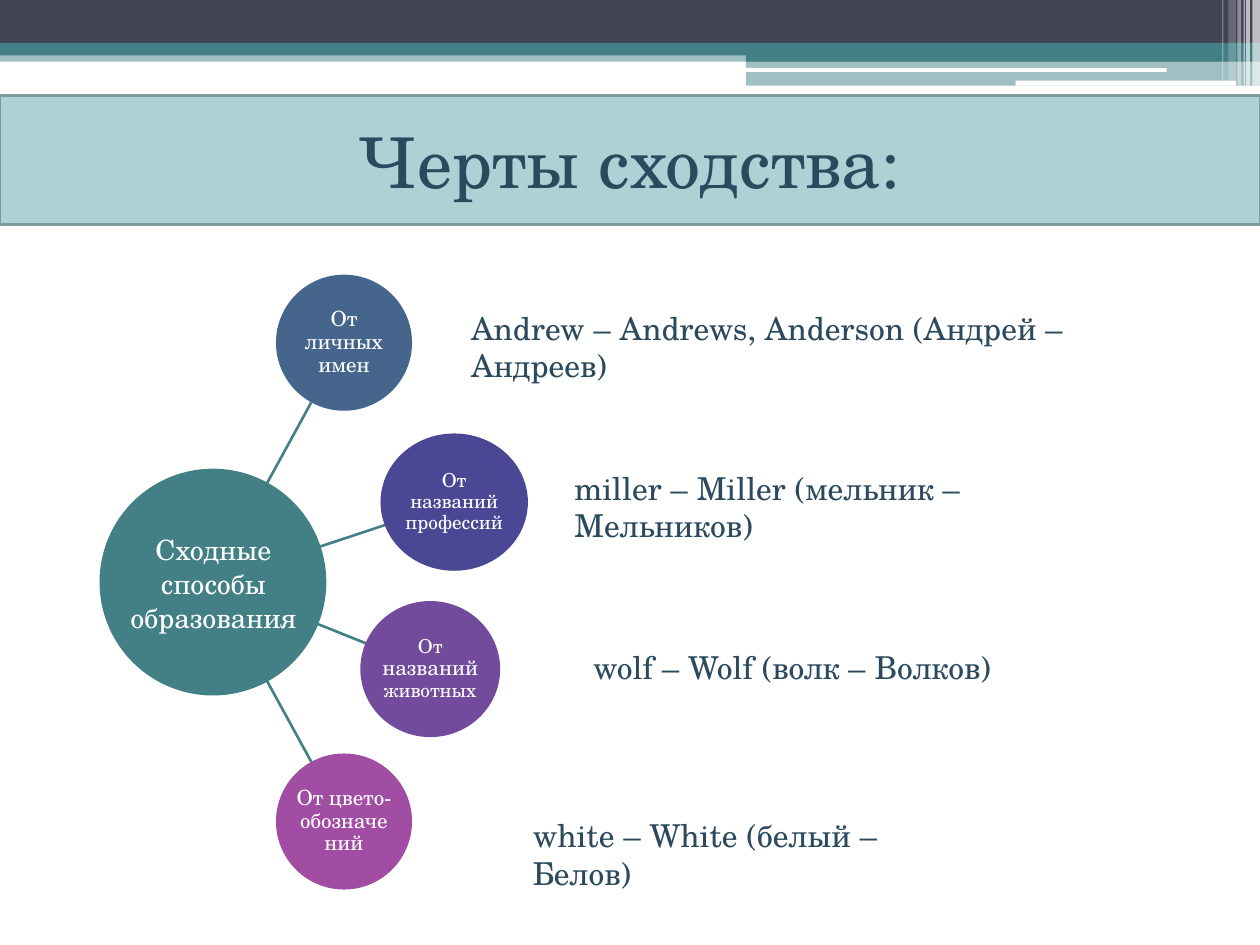
from collections import namedtuple
from math import hypot

from lxml.etree import SubElement
from pptx import Presentation
from pptx.dml.color import RGBColor
from pptx.enum.shapes import MSO_CONNECTOR as Connector, MSO_SHAPE as Shape
from pptx.enum.text import MSO_ANCHOR as Anchor, MSO_AUTO_SIZE as AutoSize, PP_ALIGN as Align
from pptx.oxml.ns import qn
from pptx.util import Inches, Pt

FONT = "TeX Gyre Schola"
WHITE = RGBColor(0xFF, 0xFF, 0xFF)
SLATE = RGBColor(0x42, 0x44, 0x56)
TEAL = RGBColor(0x43, 0x80, 0x86)
PALE_TEAL = RGBColor(0xAC, 0xD2, 0xD5)
TITLE_EDGE = RGBColor(0x7F, 0x9B, 0x9E)
INK = RGBColor(0x2B, 0x4A, 0x5E)
BLUE = RGBColor(0x46, 0x65, 0x8D)
INDIGO = RGBColor(0x4A, 0x48, 0x94)
VIOLET = RGBColor(0x73, 0x4B, 0x9C)
MAGENTA = RGBColor(0xA0, 0x4D, 0xA3)

Box = namedtuple("Box", "left top width height")


def within(box, left, top, width, height):
    return Box(box.left + left, box.top + top, width, height)


def lengths(values):
    return [Inches(value) for value in values]


def center(box):
    return box.left + box.width / 2, box.top + box.height / 2


def write(shape, text, size=18, color=INK, align=Align.LEFT, anchor=Anchor.TOP,
          spacing=None, inset=None):
    frame = shape.text_frame
    frame.word_wrap = True
    frame.auto_size = AutoSize.NONE
    frame.vertical_anchor = anchor
    if inset is not None:
        frame.margin_left = frame.margin_right = Inches(inset)
        frame.margin_top = frame.margin_bottom = Inches(inset)
    para = frame.paragraphs[0]
    para.alignment = align
    para.line_spacing = spacing
    pieces = [(text, size)] if isinstance(text, str) else text
    for words, points in pieces:
        span = para.add_run()
        span.text = words
        span.font.name = FONT
        span.font.size = Pt(points)
        span.font.color.rgb = color


def add_filled(page, box, color, kind=Shape.RECTANGLE, opacity=100):
    shape = page.shapes.add_shape(kind, *lengths(box))
    shape.shadow.inherit = False
    shape.fill.solid()
    shape.fill.fore_color.rgb = color
    shape.line.fill.background()
    if opacity < 100:
        tint = shape.fill._xPr.find(qn("a:solidFill"))[0]
        SubElement(tint, qn("a:alpha")).set("val", str(opacity * 1000))
    return shape


def add_header(page, box):
    bands = [
        (0, 0.4, 10, 0.09, TEAL, 50),
        (0, 0, 10, 0.34, SLATE, 100),
        (0, 0.34, 10, 0.1, TEAL, 100),
        (5.92, 0.39, 4.08, 0.1, TEAL, 100),
        (5.92, 0.48, 4.08, 0.2, TEAL, 50),
    ]
    for *place, color, opacity in bands:
        add_filled(page, within(box, *place), color, opacity=opacity)
    for place in [(5.91, 0.54, 3.35, 0.03), (8.06, 0.64, 1.75, 0.04)]:
        add_filled(page, within(box, *place), WHITE, Shape.ROUNDED_RECTANGLE)
    stripes = [
        (9.94, 0.06, 0.68, 65),
        (9.89, 0.03, 0.68, 65),
        (9.87, 0.01, 0.68, 60),
        (9.82, 0.03, 0.68, 40),
        (9.75, 0.06, 0.64, 20),
        (9.7, 0.01, 0.64, 30),
    ]
    for left, width, height, opacity in stripes:
        add_filled(page, within(box, left, 0, width, height), WHITE, opacity=opacity)


def add_title(page, box):
    title = page.shapes.title
    title.left, title.top, title.width, title.height = lengths(box)
    title.fill.solid()
    title.fill.fore_color.rgb = PALE_TEAL
    title.line.color.rgb = TITLE_EDGE
    title.line.width = Pt(1.5)
    write(title, "Черты сходства:", size=40, align=Align.CENTER, anchor=Anchor.MIDDLE)


def add_spoke(page, hub, circle):
    (hub_x, hub_y), (end_x, end_y) = center(hub), center(circle)
    run, rise = end_x - hub_x, end_y - hub_y
    length = hypot(run, rise)
    inner, outer = 0.72 / length, 1 - 0.54 / length
    spoke = page.shapes.add_connector(Connector.STRAIGHT, *lengths((
        hub_x + run * inner, hub_y + rise * inner,
        hub_x + run * outer, hub_y + rise * outer)))
    spoke.line.color.rgb = TEAL
    spoke.line.width = Pt(1.5)
    SubElement(spoke._element.spPr, qn("a:effectLst"))


def add_radial_diagram(page, box):
    hub = within(box, 0, 1.54, 1.8, 1.8)
    sources = [
        ((1.4, 0, 1.08, 1.08), BLUE, "От личных имен", 12),
        ((2.23, 1.26, 1.17, 1.09), INDIGO, "От названий профессий", 11),
        ((2.07, 2.59, 1.11, 1.08), VIOLET,
         [("От ", 11), ("названий", 12), (" животных", 11)], 11),
        ((1.4, 3.8, 1.08, 1.08), MAGENTA, "От цвето-обозначений", 12),
    ]
    for place, *_ in sources:
        add_spoke(page, hub, within(box, *place))
    add_filled(page, hub, TEAL, Shape.OVAL)
    for place, color, text, size in sources:
        circle = add_filled(page, within(box, *place), color, Shape.OVAL)
        write(circle, text, size=size, color=WHITE, align=Align.CENTER,
              anchor=Anchor.MIDDLE, spacing=0.9, inset=0)
    label = page.shapes.add_textbox(*lengths(within(hub, 0.04, 0.46, 1.73, 0.91)))
    write(label, "Сходные способы образования", size=16, color=WHITE, align=Align.CENTER)


def add_examples(page, box):
    examples = [
        (0, 0, 5.97, "Andrew – Andrews, Anderson (Андрей – Андреев)"),
        (0.82, 1.27, 4.7, "miller – Miller (мельник – Мельников)"),
        (0.97, 2.69, 3.45, "wolf – Wolf (волк – Волков)"),
        (0.49, 4.03, 3.75, "white – White (белый – Белов)"),
    ]
    for left, top, width, text in examples:
        example = page.shapes.add_textbox(*lengths(within(box, left, top, width, 0.4)))
        write(example, text)


def main():
    deck = Presentation()
    deck.slide_width, deck.slide_height = Inches(10), Inches(7.5)
    page = deck.slides.add_slide(deck.slide_layouts[5])
    add_header(page, Box(0, 0, 10, 0.68))
    add_title(page, Box(0, 0.76, 10, 1.02))
    add_radial_diagram(page, Box(0.79, 2.18, 3.4, 4.88))
    add_examples(page, Box(3.64, 2.4, 5.97, 4.43))
    deck.save("out.pptx")


if __name__ == "__main__":
    main()
